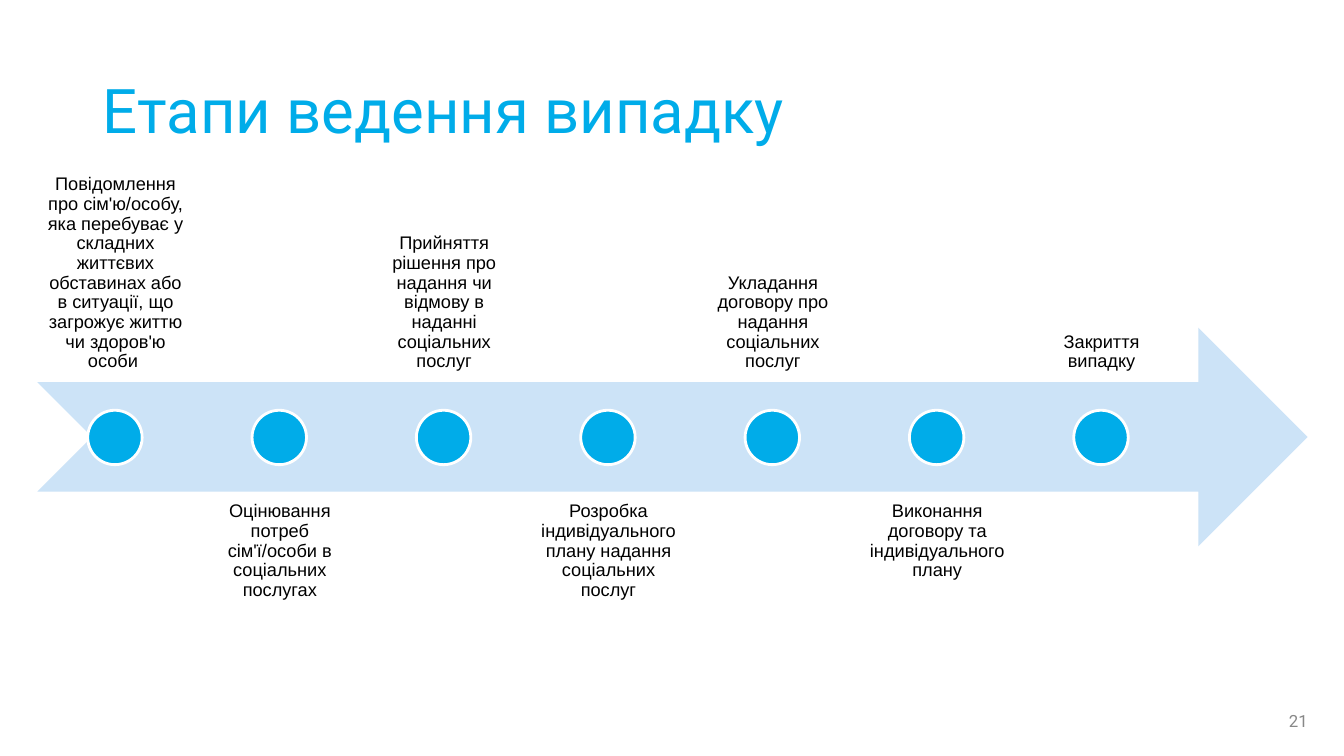
import pptx
import pptx.util
import pptx.dml.color
import pptx.enum.shapes
import pptx.enum.text

Inches = pptx.util.Inches
Pt = pptx.util.Pt
RGBColor = pptx.dml.color.RGBColor
Shape = pptx.enum.shapes.MSO_SHAPE
Align = pptx.enum.text.PP_ALIGN
Anchor = pptx.enum.text.MSO_ANCHOR

BLUE = RGBColor(0x00, 0xAC, 0xE9)
PALE = RGBColor(0xCC, 0xE3, 0xF7)
GRAY = RGBColor(0x88, 0x88, 0x88)
WHITE = RGBColor(0xFF, 0xFF, 0xFF)
BLACK = RGBColor(0x00, 0x00, 0x00)

STAGES = [
    "Повідомлення про сім'ю/особу, яка перебуває у складних життєвих обставинах або в ситуації, що загрожує життю чи здоров'ю особи ",
    "Оцінювання потреб сім'ї/особи в соціальних послугах",
    "Прийняття рішення про надання чи відмову в наданні соціальних послуг",
    "Розробка індивідуального плану надання соціальних послуг",
    "Укладання договору про надання соціальних послуг",
    "Виконання договору та індивідуального плану",
    "Закриття випадку",
]

deck = pptx.Presentation()
deck.slide_width = Inches(13.33)
deck.slide_height = Inches(7.5)
slide = deck.slides.add_slide(deck.slide_layouts[6])


def add_text(text, left, top, width, height, size, face, color, align, anchor, space=1.0, inset=0.05):
    box = slide.shapes.add_textbox(Inches(left), Inches(top), Inches(width), Inches(height))
    frame = box.text_frame
    frame.word_wrap = True
    frame.vertical_anchor = anchor
    frame.margin_left = frame.margin_right = Inches(0.1)
    frame.margin_top = frame.margin_bottom = Inches(inset)
    frame.text = text
    para = frame.paragraphs[0]
    para.alignment = align
    para.line_spacing = space
    font = para.runs[0].font
    font.size = Pt(size)
    font.name = face
    font.color.rgb = color


def add_solid(kind, left, top, width, height, color):
    shape = slide.shapes.add_shape(kind, Inches(left), Inches(top), Inches(width), Inches(height))
    shape.shadow.inherit = False
    shape.fill.solid()
    shape.fill.fore_color.rgb = color
    shape.line.fill.background()
    return shape


# Title
add_text("Етапи ведення випадку", 0.92, 0.4, 11.5, 1.45, 44, "Roboto", BLUE,
         Align.LEFT, Anchor.MIDDLE, 0.9)

# Timeline arrow
add_solid(Shape.NOTCHED_RIGHT_ARROW, 0.37, 3.25, 12.6, 2.17, PALE)

# Stages: labels alternate above and below the arrow
STEP = 1.63
for i, stage in enumerate(STAGES):
    left = 0.37 + i * STEP
    top, anchor = (4.88, Anchor.TOP) if i % 2 else (1.62, Anchor.BOTTOM)
    add_text(stage, left, top, 1.55, 2.17, 13, "Arial", BLACK,
             Align.CENTER, anchor, 0.9, 0.1)
    dot = add_solid(Shape.OVAL, left + 0.5, 4.07, 0.54, 0.54, BLUE)
    dot.line.color.rgb = WHITE
    dot.line.width = Pt(2)

# Slide number
add_text("21", 10.07, 6.95, 3, 0.4, 12, "Roboto", GRAY, Align.RIGHT, Anchor.MIDDLE)

deck.save("out.pptx")
